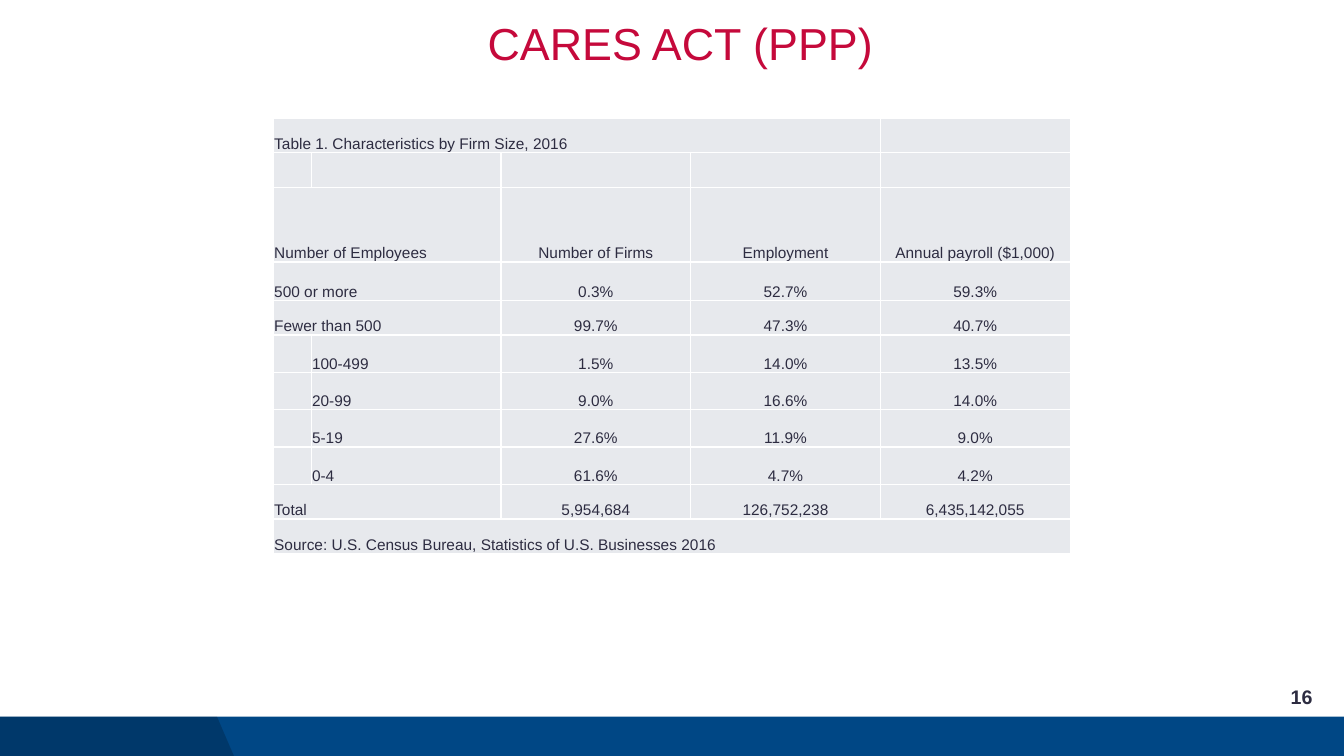
from dataclasses import dataclass

from lxml import etree
from pptx import Presentation
from pptx.dml.color import RGBColor
from pptx.enum.shapes import MSO_SHAPE
from pptx.enum.text import MSO_ANCHOR, PP_ALIGN
from pptx.oxml.ns import qn
from pptx.util import Pt

LEFT, CENTER, RIGHT = PP_ALIGN.LEFT, PP_ALIGN.CENTER, PP_ALIGN.RIGHT
MIDDLE, BOTTOM = MSO_ANCHOR.MIDDLE, MSO_ANCHOR.BOTTOM
RECTANGLE = MSO_SHAPE.RECTANGLE


@dataclass(frozen=True)
class Theme:
    font: str = "Arial"
    title: str = "C5093B"
    text: str = "2D2C41"
    cell: str = "E7E9ED"
    border: str = "FFFFFF"
    footer: str = "004785"
    shade: str = "000000"
    title_size: int = 32
    number_size: int = 14
    table_size: int = 11


THEME = Theme()
SLIDE_W, SLIDE_H = 960, 540
FOOTER_TOP, FOOTER_H = 511.9, 30.2
COLUMN_WIDTHS = [27] + [135.5] * 4
ROW_HEIGHTS = [24.8, 24.8, 53.3, 27.4, 24.8] + [26.7] * 4 + [24.8] * 2

# None continues the cell to its left
ROWS = [
    ["Table 1. Characteristics by Firm Size, 2016", None, None, None, ""],
    ["", "", "", "", ""],
    ["Number of Employees", None, "Number of Firms", "Employment", "Annual payroll ($1,000)"],
    ["500 or more", None, "0.3%", "52.7%", "59.3%"],
    ["Fewer than 500", None, "99.7%", "47.3%", "40.7%"],
    ["", "100-499", "1.5%", "14.0%", "13.5%"],
    ["", "20-99", "9.0%", "16.6%", "14.0%"],
    ["", "5-19", "27.6%", "11.9%", "9.0%"],
    ["", "0-4", "61.6%", "4.7%", "4.2%"],
    ["Total", None, "5,954,684", "126,752,238", "6,435,142,055"],
    ["Source: U.S. Census Bureau, Statistics of U.S. Businesses 2016", None, None, None, None],
]


def write(tf, text, size, color, align, bold=False):
    p = tf.paragraphs[0]
    p.text = text
    p.alignment = align
    p.font.name = THEME.font
    p.font.size = Pt(size)
    p.font.bold = bold
    p.font.color.rgb = RGBColor.from_string(color)
    return p


def paint(sp, color):
    sp.shadow.inherit = False
    sp.fill.solid()
    sp.fill.fore_color.rgb = RGBColor.from_string(color)
    sp.line.fill.background()


def add_footer(slide):
    bar = slide.shapes.add_shape(RECTANGLE, 0, Pt(FOOTER_TOP), Pt(SLIDE_W), Pt(FOOTER_H))
    paint(bar, THEME.footer)
    bottom = FOOTER_TOP + FOOTER_H
    builder = slide.shapes.build_freeform(0, Pt(FOOTER_TOP))
    corners = [(155, FOOTER_TOP), (168, bottom), (0, bottom)]
    builder.add_line_segments([(Pt(x), Pt(y)) for x, y in corners], close=True)
    wedge = builder.convert_to_shape()
    paint(wedge, THEME.shade)
    color = wedge.fill._xPr.find(qn("a:solidFill"))[0]
    etree.SubElement(color, qn("a:alpha"), val="20000")


def add_title(slide, text):
    sp = slide.shapes.title
    sp.left, sp.top, sp.width, sp.height = Pt(168), Pt(12), Pt(636), Pt(42)
    tf = sp.text_frame
    tf.margin_left = tf.margin_right = 0
    tf.vertical_anchor = MIDDLE
    p = write(tf, text, THEME.title_size, THEME.title, CENTER)
    p.line_spacing = 0.9


def add_page_number(slide, text):
    sp = slide.shapes.add_textbox(Pt(728.6), Pt(483.5), Pt(216), Pt(28.8))
    tf = sp.text_frame
    tf.word_wrap = True
    tf.vertical_anchor = MIDDLE
    write(tf, text, THEME.number_size, THEME.text, RIGHT, bold=True)


def format_cell(cell, text, align):
    tcPr = cell._tc.get_or_add_tcPr()
    for side in ("lnL", "lnR", "lnT", "lnB"):
        ln = etree.SubElement(tcPr, qn(f"a:{side}"), w=str(Pt(1)))
        fill = etree.SubElement(ln, qn("a:solidFill"))
        etree.SubElement(fill, qn("a:srgbClr"), val=THEME.border)
    cell.fill.solid()
    cell.fill.fore_color.rgb = RGBColor.from_string(THEME.cell)
    cell.margin_left = cell.margin_right = cell.margin_top = Pt(0.5)
    cell.margin_bottom = 0
    cell.vertical_anchor = BOTTOM
    write(cell.text_frame, text, THEME.table_size, THEME.text, align)


def add_firm_table(slide):
    frame = slide.shapes.add_table(
        len(ROWS), len(COLUMN_WIDTHS), Pt(195.4), Pt(84.3),
        Pt(sum(COLUMN_WIDTHS)), Pt(sum(ROW_HEIGHTS)))
    table = frame.table
    table.first_row = table.horz_banding = False
    for column, width in zip(table.columns, COLUMN_WIDTHS):
        column.width = Pt(width)
    for row, height in zip(table.rows, ROW_HEIGHTS):
        row.height = Pt(height)
    for i, values in enumerate(ROWS):
        start = 0
        for j, text in enumerate(values):
            format_cell(table.cell(i, j), text or "", LEFT if j < 2 else CENTER)
            if text is not None:
                start = j
            elif j + 1 == len(values) or values[j + 1] is not None:
                table.cell(i, start).merge(table.cell(i, j))


def main():
    prs = Presentation()
    prs.slide_width, prs.slide_height = Pt(SLIDE_W), Pt(SLIDE_H)
    slide = prs.slides.add_slide(prs.slide_layouts[5])
    add_footer(slide)
    add_page_number(slide, "16")
    add_title(slide, "CARES ACT (PPP)")
    add_firm_table(slide)
    prs.save("out.pptx")


if __name__ == "__main__":
    main()
